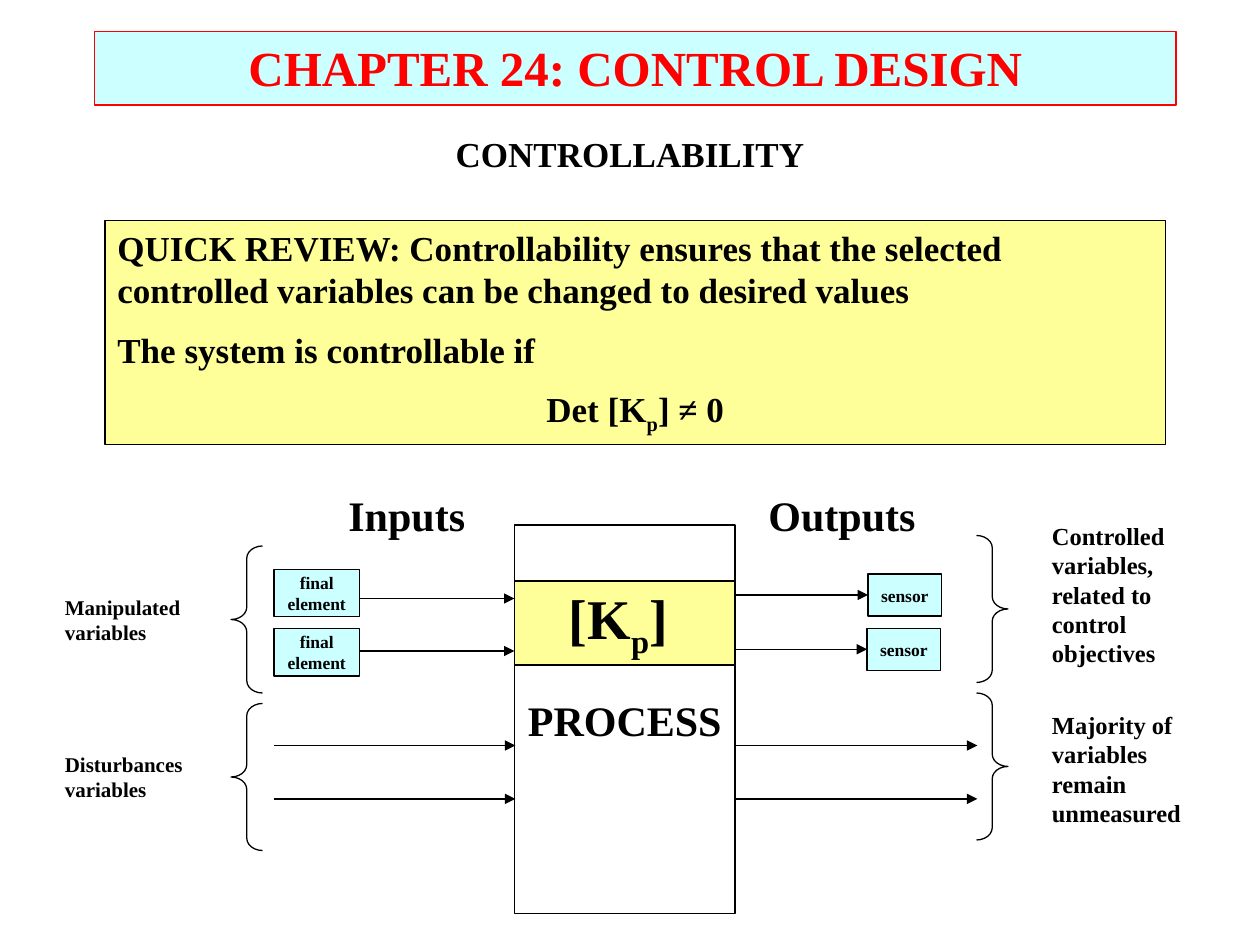
from lxml import etree
from pptx import Presentation
from pptx.dml.color import RGBColor
from pptx.enum import shapes as kinds, text as txt
from pptx.oxml import ns
from pptx.util import Pt

THEME = {
    "font": "Times New Roman", "line": 0.75,
    "black": "000000", "red": "FF0000", "aqua": "CCFFFF", "yellow": "FFFF99",
    "title": 28, "body": 20, "heading": 24, "gain": 32,
    "group": 12, "role": 14, "device": 10,
}
LEFT, CENTER = txt.PP_ALIGN.LEFT, txt.PP_ALIGN.CENTER
RECT = kinds.MSO_SHAPE.RECTANGLE
SUB = -25000  # subscript offset

# Content: a paragraph is (alignment, [runs]); a subscript run is (text, SUB)
TITLE = [(CENTER, ["CHAPTER 24: CONTROL DESIGN"])]
SUBTITLE = [(CENTER, ["CONTROLLABILITY"])]
REVIEW = [
    (LEFT, ["QUICK REVIEW: Controllability ensures that the selected "
            "controlled variables can be changed to desired values"]),
    (LEFT, ["The system is controllable if"]),
    (CENTER, ["Det [K", ("p", SUB), "] ≠ 0"]),
]
GAIN = [(LEFT, ["[K", ("p", SUB), "]"])]
PROCESS = [(CENTER, ["PROCESS"])]
ELEMENT = [(CENTER, ["final"]), (CENTER, ["element"])]
SENSOR = [(CENTER, ["sensor"])]
HEADINGS = [("Inputs", 192, 81), ("Outputs", 432, 99)]  # text, left, width
GROUPS = [("Manipulated variables", 336), ("Disturbances variables", 426)]
ROLES = [("Controlled variables, related to control objectives", 294, 91),
         ("Majority of variables remain unmeasured", 402, 74)]

# Layout
PROCESS_X, PROCESS_W = 294, 126
PROCESS_RIGHT = PROCESS_X + PROCESS_W
INPUT_X, OUTPUT_X = 156.5, 558.5
DISTURBANCE_ROWS = (426, 456.5)
ELEMENTS = [(325.5, 342), (359.25, 372)]  # box top, arrow height
SENSORS = [(496, 328), (495.5, 359)]
SENSOR_H = 24
BRACE_W, BRACE_H, BRACE_STEP = 18, 84, 90
BRACES = [(kinds.MSO_SHAPE.LEFT_BRACE, 132, 312),
          (kinds.MSO_SHAPE.RIGHT_BRACE, 558, 306)]


def color(name):
    return RGBColor.from_string(THEME[name])


def write(shape, paragraphs, size, ink="black", wrap=True,
          anchor=txt.MSO_ANCHOR.TOP, gap=0):
    frame = shape.text_frame
    frame.word_wrap = wrap
    frame.vertical_anchor = anchor
    for i, (align, runs) in enumerate(paragraphs):
        para = frame.paragraphs[0] if i == 0 else frame.add_paragraph()
        para.alignment = align
        if i:
            para.space_before = Pt(gap)
        for item in runs:
            words, shift = item if isinstance(item, tuple) else (item, 0)
            run = para.add_run()
            run.text = words
            run.font.name = THEME["font"]
            run.font.size = Pt(THEME[size])
            run.font.bold = True
            run.font.color.rgb = color(ink)
            if shift:
                run.font._element.set("baseline", str(shift))


def outline(slide, kind, box, fill=None, ink="black"):
    shape = slide.shapes.add_shape(kind, *map(Pt, box))
    shape.shadow.inherit = False
    if fill:
        shape.fill.solid()
        shape.fill.fore_color.rgb = color(fill)
    else:
        shape.fill.background()
    shape.line.color.rgb = color(ink)
    shape.line.width = Pt(THEME["line"])
    return shape


def label(slide, box, paragraphs, size, wrap=True):
    write(slide.shapes.add_textbox(*map(Pt, box)), paragraphs, size, wrap=wrap)


def device(slide, box, paragraphs):
    shape = outline(slide, RECT, box, "aqua")
    write(shape, paragraphs, "device", wrap=False, anchor=txt.MSO_ANCHOR.MIDDLE)
    return shape


def arrow(slide, start, end, y):
    line = slide.shapes.add_connector(
        kinds.MSO_CONNECTOR.STRAIGHT, Pt(start), Pt(y), Pt(end), Pt(y))
    line.line.color.rgb = color("black")
    line.line.width = Pt(THEME["line"])
    etree.SubElement(line.line._get_or_add_ln(), ns.qn("a:tailEnd"), type="triangle")
    etree.SubElement(line._element.spPr, ns.qn("a:effectLst"))
    return line


def main():
    deck = Presentation()
    deck.slide_width, deck.slide_height = Pt(720), Pt(540)
    slide = deck.slides.add_slide(deck.slide_layouts[6])

    # Title, subtitle and review panel
    title = outline(slide, RECT, (54, 18, 618, 42), "aqua", "red")
    write(title, TITLE, "title", "red")
    label(slide, (54, 72, 612, 31), SUBTITLE, "body")
    review = outline(slide, RECT, (60, 126, 606, 128), "yellow")
    write(review, REVIEW, "body", gap=10)

    # Process block with its gain matrix
    outline(slide, RECT, (PROCESS_X, 332, PROCESS_W, 48), "yellow")
    process = outline(slide, RECT, (PROCESS_X, 300, PROCESS_W, 222))
    write(process, PROCESS, "heading", wrap=False, anchor=txt.MSO_ANCHOR.MIDDLE)
    label(slide, (318, 330, 78, 45), GAIN, "gain")
    for words, left, width in HEADINGS:
        label(slide, (left, 276, width, 36), [(LEFT, [words])], "heading", wrap=False)

    # Inputs through final elements, outputs to sensors
    for top, y in ELEMENTS:
        arrow(slide, INPUT_X, PROCESS_X, y)
        device(slide, (INPUT_X, top, 49, 27), ELEMENT)
    for left, top in SENSORS:
        sensor = device(slide, (left, top, 42, SENSOR_H), SENSOR)
        arrow(slide, PROCESS_RIGHT, left, top + SENSOR_H / 2).end_connect(sensor, 1)

    # Disturbances and unmeasured outputs
    for y in DISTURBANCE_ROWS:
        arrow(slide, INPUT_X, PROCESS_X + 0.5, y)
        arrow(slide, PROCESS_RIGHT, OUTPUT_X, y)

    # Braces and the names of the variable groups
    for kind, left, top in BRACES:
        for row in range(2):
            brace = outline(slide, kind, (left, top + row * BRACE_STEP, BRACE_W, BRACE_H))
            brace.adjustments[0] = 0.39
    for words, top in GROUPS:
        label(slide, (30, top, 84, 36), [(LEFT, [words])], "group")
    for words, top, height in ROLES:
        label(slide, (594, top, 114, height), [(LEFT, [words])], "role")

    deck.save("out.pptx")


if __name__ == "__main__":
    main()
